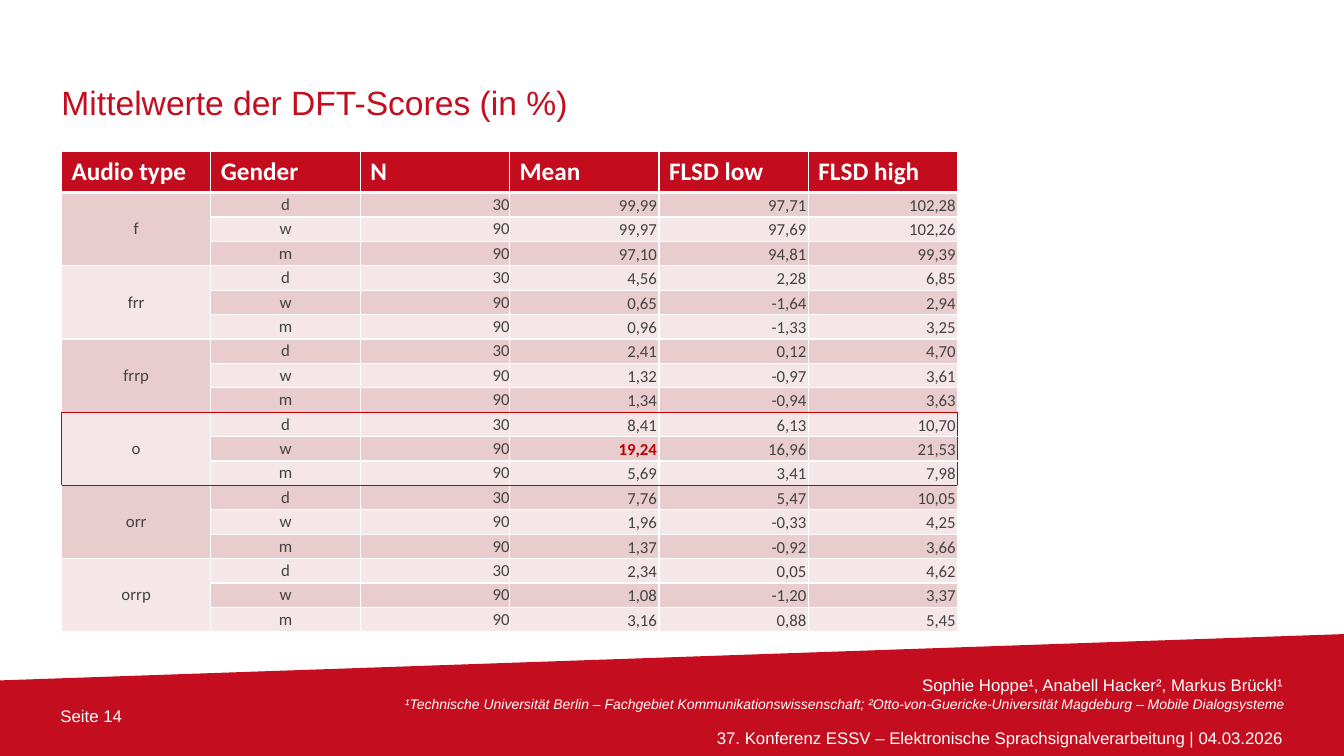
from lxml import etree
from pptx import Presentation
from pptx import util as u
from pptx.dml.color import RGBColor
from pptx.enum import text
from pptx.oxml import ns

RED = RGBColor(0xC4, 0x0D, 0x1E)
HEADER_RED = RGBColor(0xC3, 0x0D, 0x1E)
FRAME_RED = RGBColor(0xC0, 0x00, 0x00)
DARK_BAND = RGBColor(0xE9, 0xCC, 0xCD)
LIGHT_BAND = RGBColor(0xF5, 0xE7, 0xE8)
GREY = RGBColor(0x43, 0x43, 0x43)
WHITE = RGBColor(0xFF, 0xFF, 0xFF)

LEFT, CENTER, RIGHT = text.PP_ALIGN.LEFT, text.PP_ALIGN.CENTER, text.PP_ALIGN.RIGHT
MIDDLE, BOTTOM = text.MSO_ANCHOR.MIDDLE, text.MSO_ANCHOR.BOTTOM

HEADERS = ["Audio type", "Gender", "N", "Mean", "FLSD low", "FLSD high"]
GENDERS = [("d", "30"), ("w", "90"), ("m", "90")]
SCORES = {
    "f": ["99,99 97,71 102,28", "99,97 97,69 102,26", "97,10 94,81 99,39"],
    "frr": ["4,56 2,28 6,85", "0,65 -1,64 2,94", "0,96 -1,33 3,25"],
    "frrp": ["2,41 0,12 4,70", "1,32 -0,97 3,61", "1,34 -0,94 3,63"],
    "o": ["8,41 6,13 10,70", "19,24 16,96 21,53", "5,69 3,41 7,98"],
    "orr": ["7,76 5,47 10,05", "1,96 -0,33 4,25", "1,37 -0,92 3,66"],
    "orrp": ["2,34 0,05 4,62", "1,08 -1,20 3,37", "3,16 0,88 5,45"],
}
BEST_MEAN = "19,24"
FRAMED = "o"
GROUP = len(GENDERS)
FRAME_TOP = 1 + GROUP * list(SCORES).index(FRAMED)
FRAME_BOTTOM = FRAME_TOP + GROUP
WHITE_EDGE, HEADER_EDGE, RED_EDGE = (WHITE, 1), (WHITE, 3), (FRAME_RED, 0.75)


def row_edge(line):
    """Style of the horizontal rule above the given table row."""
    if line in (FRAME_TOP, FRAME_BOTTOM):
        return RED_EDGE
    return HEADER_EDGE if line == 1 else WHITE_EDGE


def column_edge(line, row):
    """Style of the vertical rule left of the given table column."""
    framed = FRAME_TOP <= row < FRAME_BOTTOM
    return RED_EDGE if framed and line in (0, len(HEADERS)) else WHITE_EDGE


class SlideBuilder:
    font = "Arial"
    table_font = "Calibri"

    def __init__(self, deck):
        self.page = deck.slides.add_slide(deck.slide_layouts[5])

    def format_para(self, para, size, color, align=LEFT, font=None, bold=False, italic=False):
        para.alignment = align
        for span in para.runs:
            span.font.name = font or self.font
            span.font.size = u.Pt(size)
            span.font.color.rgb = color
            span.font.bold = bold
            span.font.italic = italic

    def prepare_frame(self, frame, anchor):
        frame.word_wrap = True
        frame.vertical_anchor = anchor
        frame.margin_left = frame.margin_right = frame.margin_top = frame.margin_bottom = 0

    def title(self, words, left, top, width, height):
        box = self.page.shapes.title
        box.left, box.top = u.Inches(left), u.Inches(top)
        box.width, box.height = u.Inches(width), u.Inches(height)
        self.prepare_frame(box.text_frame, BOTTOM)
        box.text_frame.auto_size = text.MSO_AUTO_SIZE.NONE
        box.text_frame.text = words
        para = box.text_frame.paragraphs[0]
        para.line_spacing = u.Pt(28)
        self.format_para(para, 24, RED)

    def outline(self, points, color):
        start, *rest = [(u.Inches(x), u.Inches(y)) for x, y in points]
        builder = self.page.shapes.build_freeform(*start)
        builder.add_line_segments(rest, close=True)
        shape = builder.convert_to_shape()
        shape.shadow.inherit = False
        shape.fill.solid()
        shape.fill.fore_color.rgb = color
        shape.line.fill.background()

    def text_box(self, lines, left, top, width, height, align=LEFT):
        """Each line is (words, size, italic, space before)."""
        box = self.page.shapes.add_textbox(
            u.Inches(left), u.Inches(top), u.Inches(width), u.Inches(height))
        frame = box.text_frame
        self.prepare_frame(frame, MIDDLE)
        for index, (words, size, italic, gap) in enumerate(lines):
            para = frame.add_paragraph() if index else frame.paragraphs[0]
            para.text = words
            if gap:
                para.space_before = u.Pt(gap)
            self.format_para(para, size, WHITE, align, italic=italic)

    def borders(self, cell, edges):
        props = cell._tc.get_or_add_tcPr()
        for side, (color, width) in zip("LRTB", edges):
            line = etree.SubElement(props, ns.qn(f"a:ln{side}"), w=str(u.Pt(width)))
            fill = etree.SubElement(line, ns.qn("a:solidFill"))
            etree.SubElement(fill, ns.qn("a:srgbClr"), val=str(color))

    def cell(self, cell, words, fill, anchor=None, margins=None, **style):
        cell.fill.solid()
        cell.fill.fore_color.rgb = fill
        if anchor is not None:
            cell.vertical_anchor = anchor
        if margins is not None:
            cell.margin_left = cell.margin_right = u.Inches(margins[0])
            cell.margin_top = cell.margin_bottom = u.Inches(margins[1])
        cell.text_frame.text = words
        self.format_para(cell.text_frame.paragraphs[0], font=self.table_font, **style)

    def score_table(self, left, top, width, height, header_height):
        rows = 1 + GROUP * len(SCORES)
        table = self.page.shapes.add_table(
            rows, len(HEADERS), u.Inches(left), u.Inches(top),
            u.Inches(width), u.Inches(height)).table
        table.horz_banding = False
        for column in table.columns:
            column.width = u.Inches(width / len(HEADERS))
        for index, row in enumerate(table.rows):
            row.height = u.Inches((height - header_height) / (rows - 1) if index else header_height)

        # Borders, with the framed group in red
        for row in range(rows):
            for column in range(len(HEADERS)):
                first, end = row, row + 1
                if column == 0 and row:
                    first = row - (row - 1) % GROUP
                    end = first + GROUP
                self.borders(table.cell(row, column), [
                    column_edge(column, row), column_edge(column + 1, row),
                    row_edge(first), row_edge(end)])

        # Header row
        for column, words in enumerate(HEADERS):
            self.cell(table.cell(0, column), words, HEADER_RED, size=18, color=WHITE, bold=True)

        # Groups of three genders per audio type
        for group, (audio_type, score_rows) in enumerate(SCORES.items()):
            first = 1 + group * GROUP
            table.cell(first, 0).merge(table.cell(first + GROUP - 1, 0))
            self.cell(table.cell(first, 0), audio_type, DARK_BAND if first % 2 else LIGHT_BAND,
                      MIDDLE, (0, 0), size=12, color=GREY, align=CENTER)
            for row, (gender_count, scores) in enumerate(zip(GENDERS, score_rows), first):
                band = DARK_BAND if row % 2 else LIGHT_BAND
                for column, words in enumerate([*gender_count, *scores.split()], 1):
                    best = words == BEST_MEAN
                    self.cell(table.cell(row, column), words, band,
                              MIDDLE if column < 3 else BOTTOM,
                              (0, 0) if column < 3 else (0.02, 0.01),
                              size=12, color=FRAME_RED if best else GREY, bold=best,
                              align=CENTER if column == 1 else RIGHT)


def main():
    deck = Presentation()
    deck.slide_width, deck.slide_height = u.Inches(13.33), u.Inches(7.5)
    slide = SlideBuilder(deck)

    # Footer band
    slide.outline([(0, 6.75), (13.34, 6.29), (13.33, 7.5), (0, 7.5)], RED)
    slide.text_box([("Seite 14", 12, False, 0)], 0.6, 7, 1.18, 0.21)
    slide.text_box([
        ("Sophie Hoppe¹, Anabell Hacker², Markus Brückl¹", 12, False, 0),
        ("¹Technische Universität Berlin – Fachgebiet Kommunikationswissenschaft; "
         "²Otto-von-Guericke-Universität Magdeburg – Mobile Dialogsysteme", 10, True, 0),
        ("37. Konferenz ESSV – Elektronische Sprachsignalverarbeitung | 04.03.2026",
         12, False, 11.5),
    ], 1.78, 6.69, 10.95, 0.74, RIGHT)

    # Title and scores
    slide.title("Mittelwerte der DFT-Scores (in %)", 0.61, 0.43, 9.09, 0.78)
    slide.score_table(0.61, 1.5, 8.89, 4.77, header_height=0.41)

    deck.save("out.pptx")


if __name__ == "__main__":
    main()
